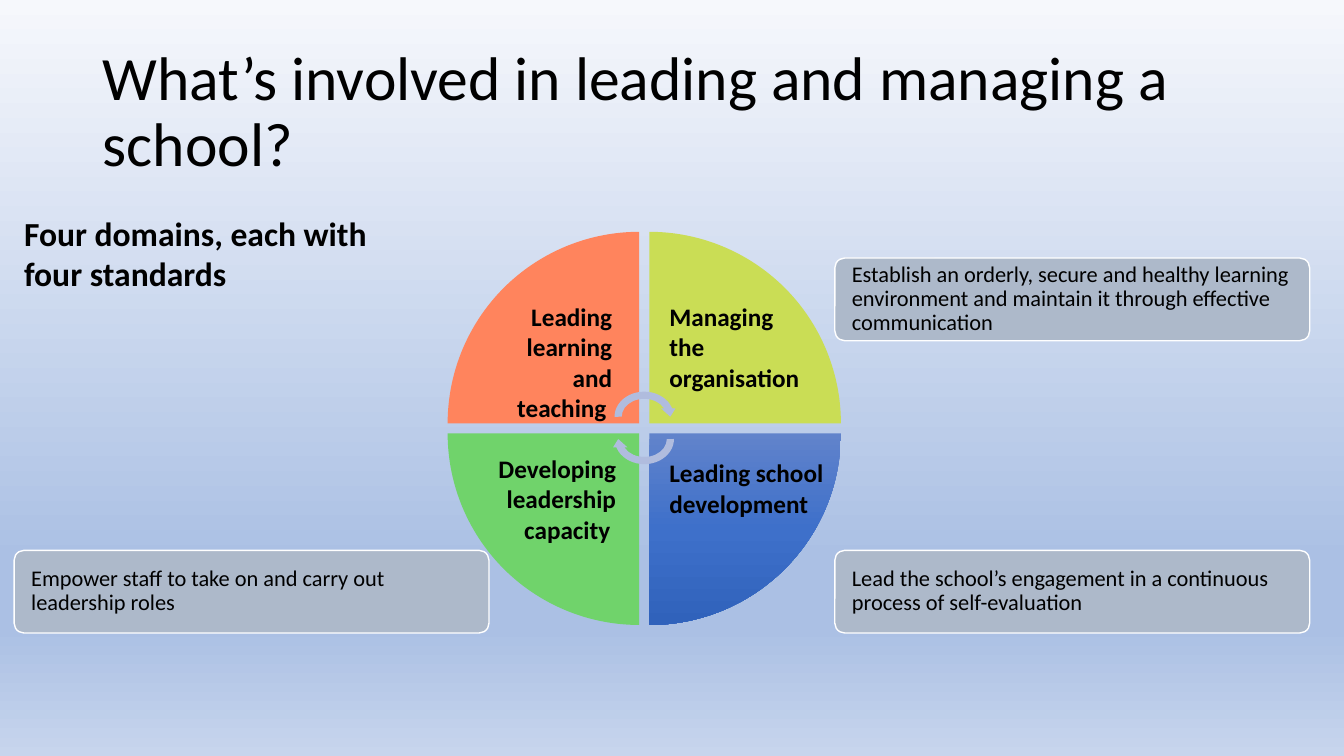
from lxml.etree import SubElement
from pptx import Presentation
from pptx.dml.color import RGBColor as RGB
from pptx.enum.shapes import MSO_SHAPE as Shape
from pptx.enum.text import MSO_ANCHOR as Anchor, MSO_AUTO_SIZE as Auto, PP_ALIGN as Align
from pptx.oxml.ns import qn
from pptx.util import Inches, Pt

HUE = {
    "ink": "000000", "white": "FFFFFF", "card": "ADB9CA", "arrow": "B0BCDE",
    "coral": "FF845D", "lime": "CADD55", "green": "70D36B",
}
SKY = [(0, "F6F8FC"), (74, "ABC0E4"), (83, "ABC0E4"), (100, "C7D5ED")]
BLUE = [(0, "6183CB"), (50, "3E70CA"), (100, "3062BB")]


def shade(fill, root, stops):
    """Fill from top to bottom with (percent, colour) stops."""
    fill.gradient()
    fill.gradient_angle = 270
    root.find(".//" + qn("a:gradFill")).set("rotWithShape", "0")
    ramp = root.find(".//" + qn("a:gsLst"))
    ramp.clear()
    for share, tone in stops:
        stop = SubElement(ramp, qn("a:gs"), pos=str(share * 1000))
        SubElement(stop, qn("a:srgbClr"), val=tone)


def write(shape, text, size, bold=False, align=Align.LEFT, space=1.0):
    frame = shape.text_frame
    frame.word_wrap = True
    frame.auto_size = Auto.NONE
    frame.text = text
    para = frame.paragraphs[0]
    para.alignment = align
    para.line_spacing = space
    para.font.name = "Calibri"
    para.font.size = Pt(size)
    para.font.bold = bold
    para.font.color.rgb = RGB.from_string(HUE["ink"])


deck = Presentation()
deck.slide_width, deck.slide_height = Inches(13.33), Inches(7.5)
slide = deck.slides.add_slide(deck.slide_layouts[5])
shapes = slide.shapes
shade(slide.background.fill, slide.background._cSld, SKY)

title = shapes.title
title.left, title.top = Inches(0.92), Inches(0.4)
title.width, title.height = Inches(11.5), Inches(1.45)
write(title, "What’s involved in leading and managing a school?", 44, space=0.9)
title.text_frame.vertical_anchor = Anchor.MIDDLE

# Wheel: four wedges around one hub
HUB_X, HUB_Y, SIDE, GAP = 6.39, 4.25, 1.9, 0.1
near, far = GAP / 2, -GAP / 2 - SIDE
wedges = [
    (far, far, "coral"), (near, far, "lime"), (near, near, None), (far, near, "green"),
]
for turn, (dx, dy, hue) in enumerate(wedges):
    wedge = shapes.add_shape(Shape.PIE_WEDGE, Inches(HUB_X + dx), Inches(HUB_Y + dy),
                             Inches(SIDE), Inches(SIDE))
    wedge.rotation = 90 * turn
    wedge.shadow.inherit = False
    wedge.line.fill.background()
    if hue:
        wedge.fill.solid()
        wedge.fill.fore_color.rgb = RGB.from_string(HUE[hue])
    else:
        shade(wedge.fill, wedge._element.spPr, BLUE)

for top, turn in [(3.85, 0), (4.07, 180)]:
    arrow = shapes.add_shape(Shape.CIRCULAR_ARROW, Inches(HUB_X - 0.33), Inches(top),
                             Inches(0.66), Inches(0.57))
    arrow.rotation = turn
    arrow.shadow.inherit = False
    arrow.line.fill.background()
    arrow.fill.solid()
    arrow.fill.fore_color.rgb = RGB.from_string(HUE["arrow"])

# Example standards
cards = [
    (8.28, 2.56, "Establish an orderly, secure and healthy learning environment "
                 "and maintain it through effective communication"),
    (8.28, 5.46, "Lead the school’s engagement in a continuous process of self-evaluation"),
    (0.14, 5.46, "Empower staff to take on and carry out leadership roles"),
]
for left, top, text in cards:
    card = shapes.add_shape(Shape.ROUNDED_RECTANGLE, Inches(left), Inches(top),
                            Inches(4.71), Inches(0.82))
    card.adjustments[0] = 0.12
    card.shadow.inherit = False
    card.fill.solid()
    card.fill.fore_color.rgb = RGB.from_string(HUE["card"])
    card.line.color.rgb = RGB.from_string(HUE["white"])
    card.line.width = Pt(1)
    write(card, text, 16, space=0.9)
    frame = card.text_frame
    frame.vertical_anchor = Anchor.MIDDLE
    frame.margin_left = frame.margin_right = Inches(0.14)
    frame.margin_top = frame.margin_bottom = Inches(0.14)

# Subtitle and domain names
labels = [
    (0.14, 2.06, 3.75, 0.91, 24, Align.LEFT, "Four domains, each with four standards"),
    (6.54, 2.94, 1.51, 1.01, 18, Align.LEFT, "Managing the organisation"),
    (6.54, 4.49, 1.88, 0.71, 18, Align.LEFT, "Leading school development"),
    (4.68, 4.45, 1.53, 1.01, 18, Align.RIGHT, "Developing leadership capacity "),
    (4.68, 2.94, 1.49, 1.01, 18, Align.RIGHT, "Leading learning and teaching "),
]
for left, top, width, height, size, align, text in labels:
    label = shapes.add_textbox(Inches(left), Inches(top), Inches(width), Inches(height))
    write(label, text, size, True, align)

deck.save("out.pptx")
